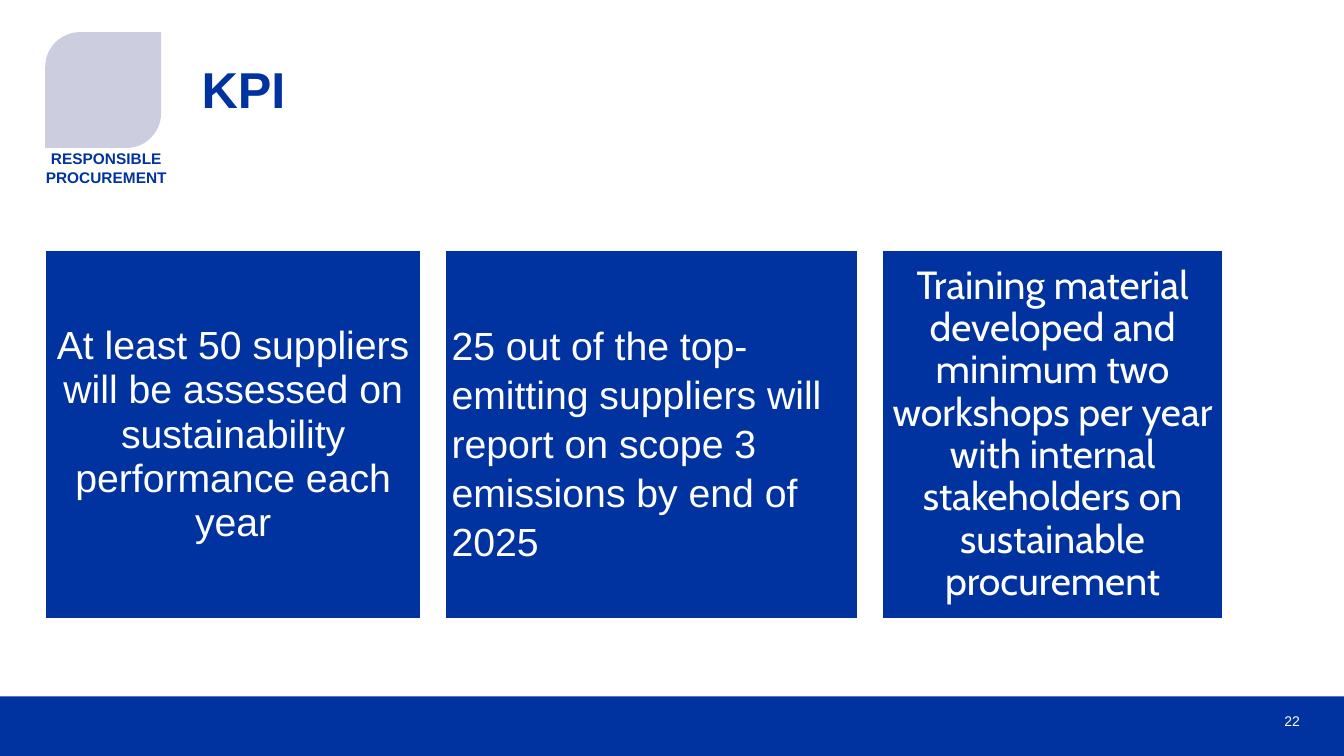
"""Build the KPI slide on responsible procurement."""
from pptx import Presentation
from pptx.dml.color import RGBColor
from pptx.enum.shapes import MSO_SHAPE
from pptx.enum.text import MSO_ANCHOR, PP_ALIGN
from pptx.util import Cm, Pt

BLUE = RGBColor(0x00, 0x33, 0xA0)
GREY = RGBColor(0xCC, 0xCE, 0xDF)
WHITE = RGBColor(0xFF, 0xFF, 0xFF)
RECT = MSO_SHAPE.RECTANGLE
LEAF = MSO_SHAPE.ROUND_2_DIAG_RECTANGLE
TOP, MIDDLE = MSO_ANCHOR.TOP, MSO_ANCHOR.MIDDLE
LEFT, CENTER, RIGHT = PP_ALIGN.LEFT, PP_ALIGN.CENTER, PP_ALIGN.RIGHT

deck = Presentation()
deck.slide_width, deck.slide_height = Cm(33.87), Cm(19.05)
slide = deck.slides.add_slide(deck.slide_layouts[6])
shapes = slide.shapes


def add_block(kind, x, y, w, h, fill):
    block = shapes.add_shape(kind, Cm(x), Cm(y), Cm(w), Cm(h))
    block.shadow.inherit = False
    block.fill.solid()
    block.fill.fore_color.rgb = fill
    block.line.fill.background()
    return block


def write(box, text, size, color=WHITE, bold=False, font="Arial", align=LEFT,
          anchor=TOP, inset=0, drop=0, lead=1.0):
    frame = box.text_frame
    frame.word_wrap = True
    frame.vertical_anchor = anchor
    frame.margin_left = frame.margin_right = frame.margin_bottom = Cm(inset)
    frame.margin_top = Cm(inset + drop)
    line = frame.paragraphs[0]
    line.alignment = align
    line.line_spacing = lead
    run = line.add_run()
    run.text = text
    run.font.name = font
    run.font.size = Pt(size)
    run.font.bold = bold
    run.font.color.rgb = color


add_block(RECT, 0, 17.55, 33.87, 1.5, BLUE)
number = shapes.add_textbox(Cm(30.86), Cm(17.65), Cm(1.9), Cm(1.02))
write(number, "22", 10, align=RIGHT, anchor=MIDDLE)

leaf = add_block(LEAF, 1.14, 0.81, 2.92, 2.92, GREY)
leaf.adjustments[0] = 0.3
leaf.adjustments[1] = 0
label = shapes.add_textbox(Cm(1.12), Cm(3.73), Cm(3.12), Cm(1))
write(label, "RESPONSIBLE PROCUREMENT", 11, color=BLUE, bold=True,
      align=CENTER, lead=1.05)

title = shapes.add_textbox(Cm(5.08), Cm(1.63), Cm(26.5), Cm(2.97))
write(title, "KPI", 36, color=BLUE, bold=True, lead=0.9)

CARDS = [
    (1.14, 9.47, "At least 50 suppliers will be assessed on sustainability "
     "performance each year", dict(align=CENTER, lead=0.94)),
    (11.23, 10.39, "25 out of the top-emitting suppliers will report on "
     "scope 3 emissions by end of 2025", dict(drop=0.36, lead=1.04)),
    (22.23, 8.59, "Training material developed and minimum two workshops "
     "per year with internal stakeholders on sustainable procurement",
     dict(align=CENTER, lead=0.9, font="Cabin")),
]
for x, width, text, style in CARDS:
    card = add_block(RECT, x, 6.32, width, 9.27, BLUE)
    card.line.color.rgb = WHITE
    card.line.width = Pt(1)
    write(card, text, 28, anchor=MIDDLE, inset=0.15, **style)

deck.save("out.pptx")
